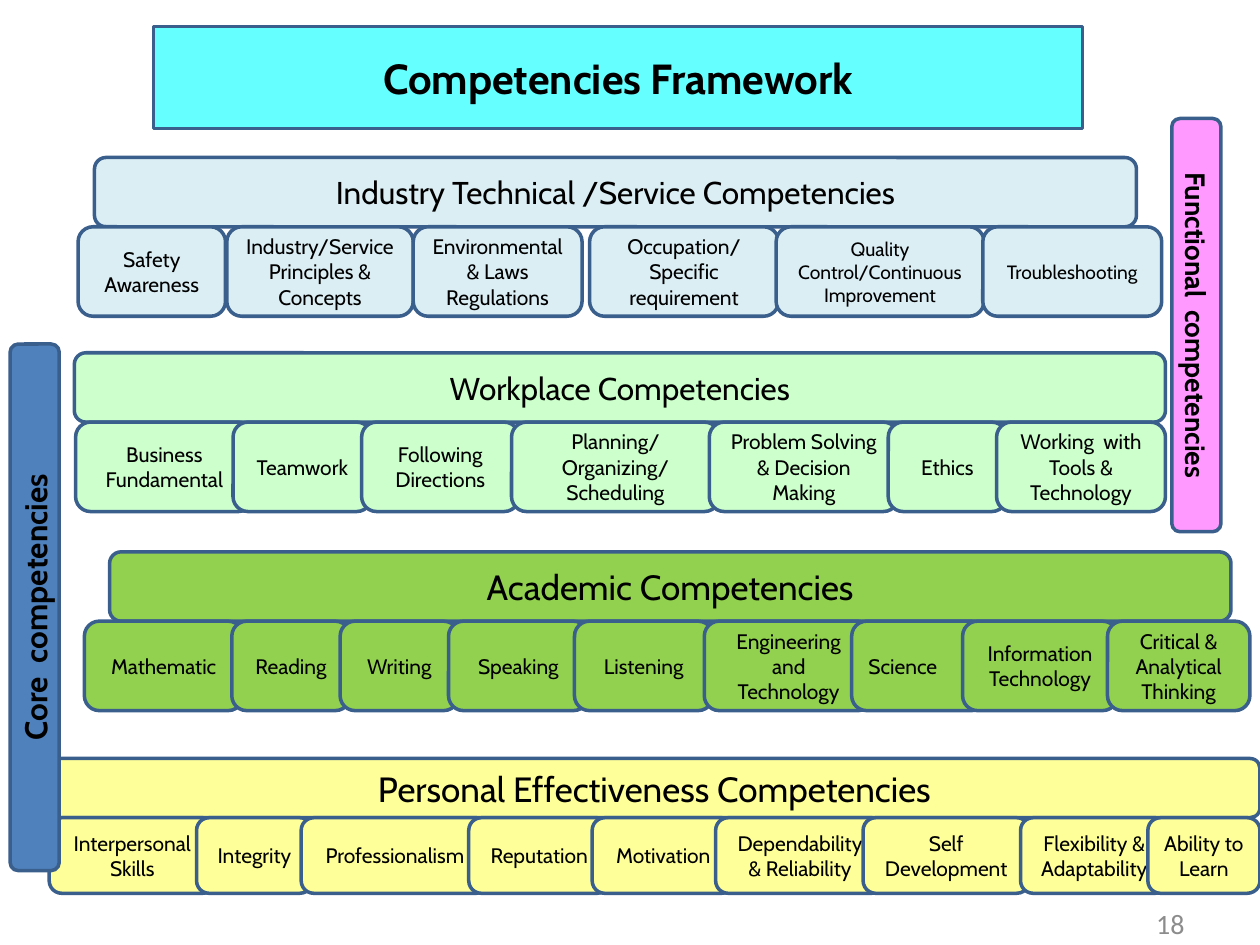
"""Build the Competencies Framework slide: four tiers of boxes and two side bars."""
import dataclasses

import pptx
import pptx.dml.color
import pptx.enum.shapes
import pptx.enum.text
import pptx.oxml
import pptx.oxml.ns
import pptx.util

Inches = pptx.util.Inches
Align = pptx.enum.text.PP_ALIGN


@dataclasses.dataclass(frozen=True)
class Theme:
    font: str = "Cabin"
    number_font: str = "Calibri"
    ink: str = "000000"
    line: str = "3A5F8C"
    number: str = "8C8C8C"
    title: str = "66FFFF"
    industry: str = "DBEEF4"
    workplace: str = "CCFFCC"
    academic: str = "92D050"
    personal: str = "FFFF99"
    core: str = "4F81BD"
    functional: str = "FF99FF"
    title_size: int = 24
    large_size: int = 20
    heading_size: int = 18
    bar_size: int = 16
    cell_size: int = 12
    small_size: int = 11
    line_width: int = 2


THEME = Theme()

TIERS = [
    dict(
        heading="Industry Technical /Service Competencies",
        size=THEME.heading_size, fill=THEME.industry,
        box=(0.75, 1.25, 8.27, 0.55), cell_height=0.71,
        cells=[
            ("Safety Awareness", 0.62, 1.17),
            ("Industry/Service Principles & Concepts", 1.8, 1.48),
            ("Environmental & Laws Regulations", 3.28, 1.34),
            ("Occupation/ Specific requirement", 4.68, 1.5),
            ("Quality Control/Continuous Improvement", 6.16, 1.65),
            ("Troubleshooting", 7.8, 1.42),
        ],
    ),
    dict(
        heading="Workplace Competencies",
        size=THEME.heading_size, fill=THEME.workplace,
        box=(0.59, 2.8, 8.66, 0.55), cell_height=0.71,
        cells=[
            ("Business Fundamental", 0.6, 1.41),
            ("Teamwork", 1.85, 1.1),
            ("Following Directions", 2.87, 1.25),
            ("Planning/Organizing/Scheduling", 4.06, 1.65),
            ("Problem Solving & Decision Making", 5.63, 1.5),
            ("Ethics", 7.05, 0.94),
            ("Working  with Tools & Technology", 7.91, 1.34),
        ],
    ),
    dict(
        heading="Academic Competencies",
        size=THEME.large_size, fill=THEME.academic,
        box=(0.87, 4.38, 8.9, 0.55), cell_height=0.71,
        cells=[
            ("Mathematic", 0.67, 1.26),
            ("Reading", 1.84, 0.94),
            ("Writing", 2.7, 0.94),
            ("Speaking", 3.56, 1.11),
            ("Listening", 4.56, 1.1),
            ("Engineering and Technology", 5.59, 1.34),
            ("Science", 6.76, 1.07),
            ("Information Technology", 7.64, 1.23),
            ("Critical & Analytical Thinking", 8.79, 1.13),
        ],
    ),
    dict(
        heading="Personal Effectiveness Competencies",
        size=THEME.large_size, fill=THEME.personal,
        box=(0.39, 6.02, 9.61, 0.47), cell_height=0.6,
        cells=[
            ("Interpersonal Skills", 0.39, 1.32),
            ("Integrity", 1.56, 0.92),
            ("Professionalism", 2.39, 1.49),
            ("Reputation", 3.72, 1.12),
            ("Motivation", 4.7, 1.13),
            ("Dependability & Reliability", 5.68, 1.34),
            ("Self Development", 6.85, 1.32),
            ("Flexibility & Adaptability", 8.1, 1.17),
            ("Ability to Learn", 9.11, 0.89),
        ],
    ),
]

CELL_STYLES = {
    "Quality Control/Continuous Improvement": dict(size=THEME.small_size),
    "Troubleshooting": dict(size=THEME.small_size),
    "Science": dict(align=Align.LEFT),
}


class SlideBuilder:
    """Hold the theme and the current slide, and draw each kind of element."""

    def __init__(self, slide, theme):
        self.slide = slide
        self.theme = theme

    def rgb(self, value):
        return pptx.dml.color.RGBColor.from_string(value)

    def set_text(self, sp, text, size, color=None, font=None, bold=False, align=Align.CENTER):
        tf = sp.text_frame
        tf.word_wrap = True
        tf.auto_size = pptx.enum.text.MSO_AUTO_SIZE.NONE
        tf.vertical_anchor = pptx.enum.text.MSO_ANCHOR.MIDDLE
        p = tf.paragraphs[0]
        p.text = text
        p.alignment = align
        p.font.name = font or self.theme.font
        p.font.size = pptx.util.Pt(size)
        p.font.bold = bold
        p.font.color.rgb = self.rgb(color or self.theme.ink)

    def paint(self, sp, fill):
        sp.fill.solid()
        sp.fill.fore_color.rgb = self.rgb(fill)
        sp.line.color.rgb = self.rgb(self.theme.line)
        sp.line.width = pptx.util.Pt(self.theme.line_width)

    def title(self, text, box):
        sp = self.slide.shapes.title
        sp.left, sp.top, sp.width, sp.height = map(Inches, box)
        sp._element.spPr.append(pptx.oxml.parse_xml(
            f'<a:prstGeom {pptx.oxml.ns.nsdecls("a")} prst="roundRect"><a:avLst/></a:prstGeom>'))
        self.paint(sp, self.theme.title)
        self.set_text(sp, text, self.theme.title_size, bold=True)

    def box(self, text, box, fill, size, **style):
        sp = self.slide.shapes.add_shape(
            pptx.enum.shapes.MSO_SHAPE.ROUNDED_RECTANGLE, *map(Inches, box))
        sp.shadow.inherit = False
        self.paint(sp, fill)
        self.set_text(sp, text, size, **style)
        return sp

    def tier(self, heading, size, fill, box, cell_height, cells):
        self.box(heading, box, fill, size)
        top = box[1] + box[3]
        for text, left, width in cells:
            style = {"size": self.theme.cell_size, **CELL_STYLES.get(text, {})}
            self.box(text, (left, top, width, cell_height), fill, **style)

    def side_bar(self, text, box, fill, size, rotation=0):
        sp = self.box(text, box, fill, size, bold=True)
        sp.rotation = rotation
        sp.text_frame._txBody.bodyPr.set("vert", "vert")

    def page_number(self, text, box):
        sp = self.slide.shapes.add_textbox(*map(Inches, box))
        self.set_text(sp, text, self.theme.bar_size, self.theme.number,
                      self.theme.number_font, align=Align.RIGHT)


def main():
    prs = pptx.Presentation()
    prs.slide_width, prs.slide_height = Inches(10), Inches(7.5)
    s = SlideBuilder(prs.slides.add_slide(prs.slide_layouts[5]), THEME)
    s.title("Competencies Framework", (1.22, 0.21, 7.37, 0.81))
    for tier in TIERS:
        s.tier(**tier)
    s.side_bar("Core  competencies", (0.08, 2.73, 0.39, 4.18),
               THEME.core, THEME.heading_size, rotation=180)
    s.side_bar("Functional  competencies", (9.3, 0.94, 0.39, 3.28),
               THEME.functional, THEME.bar_size)
    s.page_number("18", (7.17, 7.13, 2.33, 0.4))
    prs.save("out.pptx")


if __name__ == "__main__":
    main()
